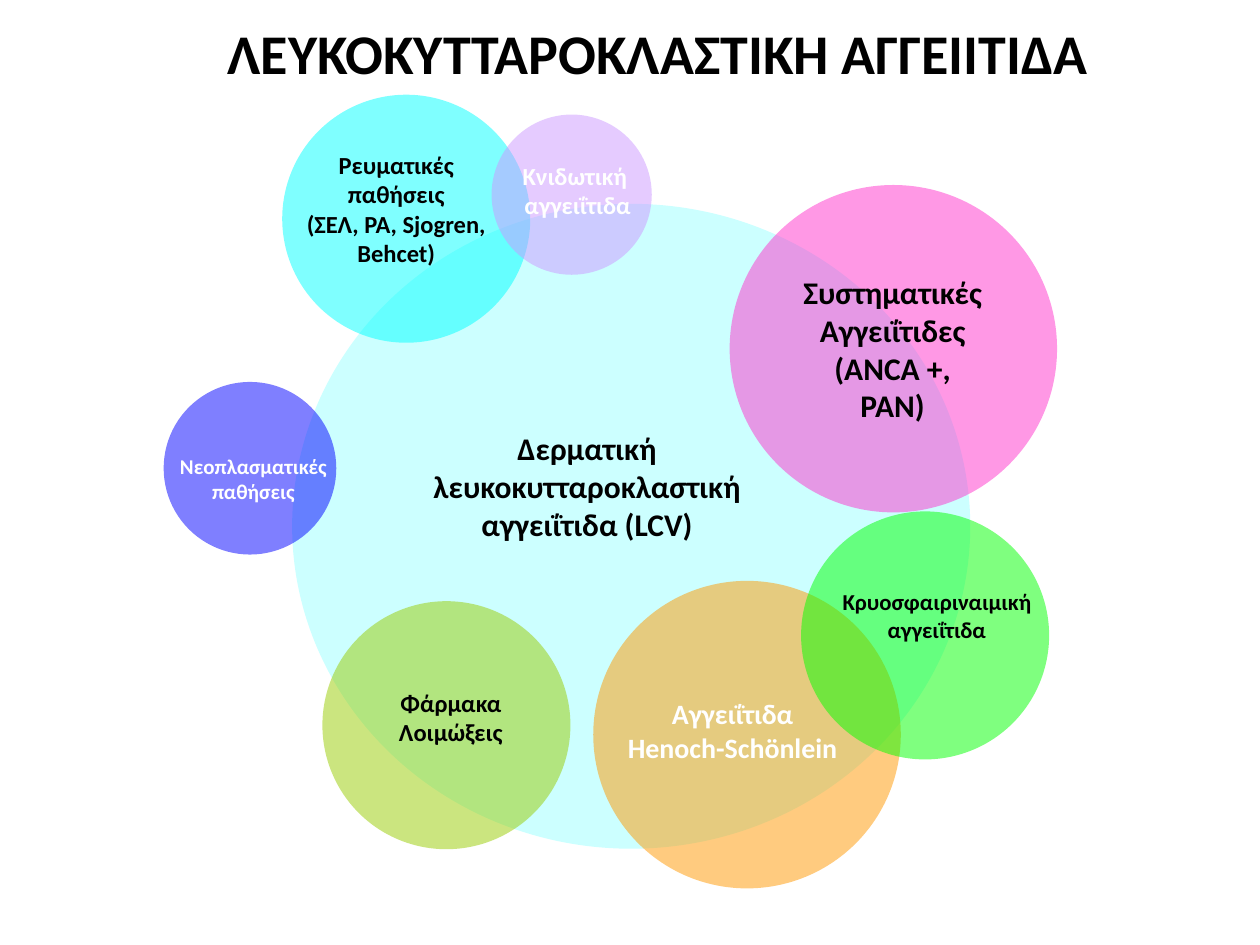
"""Build a slide of overlapping circles on leukocytoclastic vasculitis."""
from lxml.etree import SubElement
from pptx import Presentation
from pptx.dml.color import RGBColor
from pptx.enum.shapes import MSO_SHAPE
from pptx.enum.text import MSO_ANCHOR, MSO_AUTO_SIZE, PP_ALIGN
from pptx.oxml.ns import qn
from pptx.util import Cm, Pt

BLACK, WHITE = "000000", "FFFFFF"
TITLE = "ΛΕΥΚΟΚΥΤΤΑΡΟΚΛΑΣΤΙΚΗ ΑΓΓΕΙΙΤΙΔΑ"
TITLE_BOX = (4.52, 0.38, 17.5, 1.37)
CORE = {
    "circle": (5.89, 4.11, 13.67, 13), "fill": "CCFFFF", "opacity": 100,
    "label": (8.1, 8.53, 7.47, 2.54), "size": 18, "ink": BLACK,
    "lines": ["Δερματική", "λευκοκυτταροκλαστική", "αγγειΐτιδα (LCV)"],
}
CAUSES = [
    ((14.71, 3.73), 6.6, "FF33CC", (15.29, 5.38, 5.41, 3.3), 18, BLACK, True,
     ["Συστηματικές", "Αγγειΐτιδες", "(ANCA +,", "PAN)"]),
    ((11.96, 11.71), 6.2, "FF9900", (12.04, 13.92, 5.46, 1.63), 16, WHITE, False,
     ["Αγγειΐτιδα", "Henoch-Schönlein"]),
    ((16.15, 10.31), 5, "00FF00", (16.51, 11.73, 4.75, 1.35), 13, BLACK, False,
     ["Κρυοσφαιριναιμική", "αγγειΐτιδα"]),
    ((6.5, 12.12), 5, "99CC00", (7.67, 13.74, 2.84, 1.45), 14, BLACK, False,
     ["Φάρμακα", "Λοιμώξεις"]),
    ((5.69, 1.91), 5, "00FFFF", (5.69, 2.9, 4.6, 2.62), 14, BLACK, True,
     ["Ρευματικές παθήσεις", "(ΣΕΛ, ΡΑ, Sjogren, Behcet)"]),
    ((9.91, 2.31), 3.23, "CC99FF", (10.11, 3.12, 3.07, 1.45), 14, WHITE, False,
     ["Κνιδωτική ", "αγγειΐτιδα"]),
    ((3.3, 7.7), 3.48, "0000FF", (3.18, 9.02, 3.86, 1.27), 12, WHITE, False,
     ["Νεοπλασματικές", "παθήσεις"]),
]


def paint(target, colour):
    target.rgb = RGBColor.from_string(colour)


def add_circle(slide, box, colour, opacity):
    circle = slide.shapes.add_shape(MSO_SHAPE.OVAL, *map(Cm, box))
    circle.shadow.inherit = False
    circle.line.fill.background()
    circle.fill.solid()
    paint(circle.fill.fore_color, colour)
    if opacity < 100:
        tint = circle._element.spPr.find(qn("a:solidFill"))[0]
        SubElement(tint, qn("a:alpha"), val=str(opacity * 1000))


def write_lines(frame, lines, size, ink, wrap=False):
    frame.word_wrap = wrap
    frame.vertical_anchor = MSO_ANCHOR.TOP
    for index, line in enumerate(lines):
        paragraph = frame.add_paragraph() if index else frame.paragraphs[0]
        paragraph.alignment = PP_ALIGN.CENTER
        run = paragraph.add_run()
        run.text = line
        run.font.name, run.font.size, run.font.bold = "Calibri", Pt(size), True
        paint(run.font.color, ink)


def add_label(slide, box, lines, size, ink, wrap=False):
    frame = slide.shapes.add_textbox(*map(Cm, box)).text_frame
    frame.auto_size = MSO_AUTO_SIZE.SHAPE_TO_FIT_TEXT
    write_lines(frame, lines, size, ink, wrap)


def set_title(slide):
    title = slide.shapes.title
    title.left, title.top, title.width, title.height = map(Cm, TITLE_BOX)
    frame = title.text_frame
    frame.margin_left = frame.margin_right = frame.margin_top = frame.margin_bottom = 0
    frame.auto_size = MSO_AUTO_SIZE.SHAPE_TO_FIT_TEXT
    write_lines(frame, [TITLE], 32, BLACK)


def main():
    deck = Presentation()
    deck.slide_width, deck.slide_height = Cm(25.4), Cm(19.05)
    slide = deck.slides.add_slide(deck.slide_layouts[5])
    set_title(slide)
    add_circle(slide, CORE["circle"], CORE["fill"], CORE["opacity"])
    add_label(slide, CORE["label"], CORE["lines"], CORE["size"], CORE["ink"])
    for corner, diameter, colour, label, size, ink, wrap, lines in CAUSES:
        add_circle(slide, (*corner, diameter, diameter), colour, 50)
        add_label(slide, label, lines, size, ink, wrap)
    deck.save("out.pptx")


if __name__ == "__main__":
    main()
